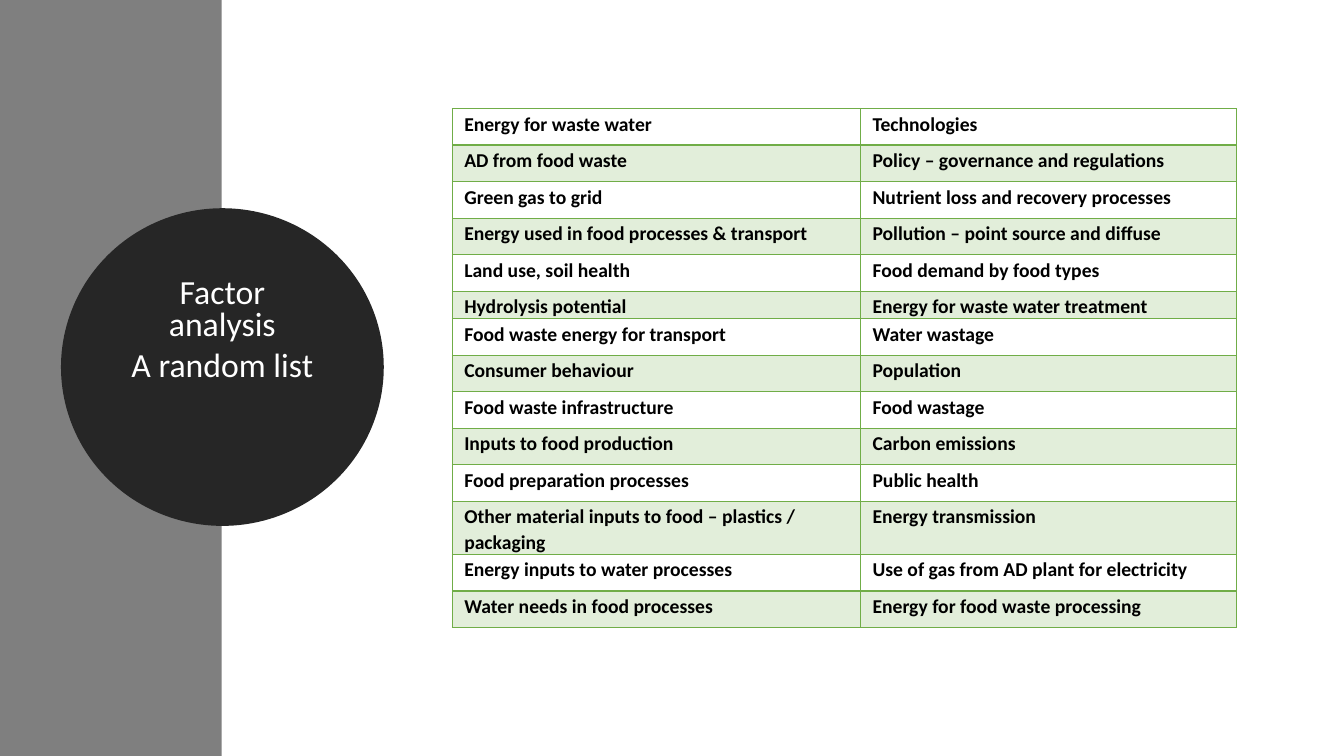
import dataclasses

import lxml.etree
import pptx
import pptx.dml.color
import pptx.enum.shapes
import pptx.enum.text
import pptx.oxml.ns
import pptx.util
from pptx.util import Cm


@dataclasses.dataclass(frozen=True)
class Theme:
    """Colours, font and type sizes of the slide."""
    font: str = "Calibri"
    band: str = "7F7F7F"
    disc: str = "262626"
    light: str = "FFFFFF"
    ink: str = "000000"
    green: str = "70AD47"
    stripe_alpha: int = 20
    title_size: float = 24.1
    factor_size: float = 14


THEME = Theme()

TITLE = ["Factor analysis", "A random list"]

FACTORS = [
    ("Energy for waste water", "Technologies"),
    ("AD from food waste", "Policy – governance and regulations"),
    ("Green gas to grid", "Nutrient loss and recovery processes"),
    ("Energy used in food processes & transport", "Pollution – point source and diffuse"),
    ("Land use, soil health", "Food demand by food types"),
    ("Hydrolysis potential", "Energy for waste water treatment"),
    ("Food waste energy for transport", "Water wastage"),
    ("Consumer behaviour", "Population"),
    ("Food waste infrastructure", "Food wastage"),
    ("Inputs to food production", "Carbon emissions"),
    ("Food preparation processes", "Public health"),
    ("Other material inputs to food – plastics / packaging", "Energy transmission"),
    ("Energy inputs to water processes", "Use of gas from AD plant for electricity"),
    ("Water needs in food processes", "Energy for food waste processing"),
]
COLUMN_WIDTHS = [Cm(10.29), Cm(9.47)]
ROW_HEIGHT = Cm(0.92)
SHORT_ROW, SHORT_HEIGHT = 5, Cm(0.41)


def rgb(colour):
    """Return a colour object for a hex string."""
    return pptx.dml.color.RGBColor.from_string(colour)


def add_child(parent, tag, **attributes):
    """Append a DrawingML element to a parent."""
    return lxml.etree.SubElement(parent, pptx.oxml.ns.qn(tag), attributes)


def style_paragraph(paragraph, size, colour, spacing, bold=False):
    """Set the line spacing and the font of a paragraph's runs."""
    paragraph.line_spacing = spacing
    for run in paragraph.runs:
        run.font.name = THEME.font
        run.font.size = pptx.util.Pt(size)
        run.font.bold = bold
        run.font.color.rgb = rgb(colour)


def add_filled_shape(slide, preset, left, top, width, height, colour):
    """Add a preset shape with a plain fill and no shadow."""
    shape = slide.shapes.add_shape(preset, left, top, width, height)
    shape.shadow.inherit = False
    shape.fill.solid()
    shape.fill.fore_color.rgb = rgb(colour)
    shape.line.fill.background()
    return shape


def add_title_disc(slide):
    """Add the dark disc that carries the title."""
    disc = add_filled_shape(slide, pptx.enum.shapes.MSO_SHAPE.OVAL,
                            Cm(1.78), Cm(5.49), Cm(7.65), Cm(7.52), THEME.disc)
    disc.line.color.rgb = rgb(THEME.disc)
    disc.line.width = pptx.util.Pt(13.75)
    frame = disc.text_frame
    frame.word_wrap = True
    frame.vertical_anchor = pptx.enum.text.MSO_ANCHOR.MIDDLE
    frame.margin_left = frame.margin_right = Cm(0.3)
    frame.margin_top, frame.margin_bottom = Cm(0.13), Cm(1.95)
    frame.text = "\n".join(TITLE)
    for paragraph in frame.paragraphs:
        paragraph.alignment = pptx.enum.text.PP_ALIGN.CENTER
        paragraph.space_after = pptx.util.Pt(6)
        style_paragraph(paragraph, THEME.title_size, THEME.light, 0.8)


def add_borders(cell, bottom_width):
    """Draw green lines on the four sides of a cell."""
    properties = cell._tc.get_or_add_tcPr()
    widths = {"a:lnL": 1, "a:lnR": 1, "a:lnT": 1, "a:lnB": bottom_width}
    for side, width in widths.items():
        line = add_child(properties, side, w=str(pptx.util.Pt(width)))
        add_child(add_child(line, "a:solidFill"), "a:srgbClr", val=THEME.green)


def fill_cell(cell, striped):
    """Give a cell the pale green stripe or no fill."""
    if not striped:
        cell.fill.background()
        return
    cell.fill.solid()
    cell.fill.fore_color.rgb = rgb(THEME.green)
    colour = cell._tc.tcPr.find(".//" + pptx.oxml.ns.qn("a:solidFill") + "[last()]")
    stripe = cell._tc.tcPr.find(pptx.oxml.ns.qn("a:solidFill"))
    colour = stripe.find(pptx.oxml.ns.qn("a:srgbClr"))
    add_child(colour, "a:alpha", val=str(THEME.stripe_alpha * 1000))


def add_factor_table(slide):
    """Add the striped two-column list of factors."""
    heights = [SHORT_HEIGHT if row == SHORT_ROW else ROW_HEIGHT
               for row in range(len(FACTORS))]
    table = slide.shapes.add_table(len(FACTORS), len(COLUMN_WIDTHS), Cm(11.4), Cm(2.74),
                                   sum(COLUMN_WIDTHS), sum(heights)).table
    table.first_row = table.horz_banding = False
    for column, width in zip(table.columns, COLUMN_WIDTHS):
        column.width = width
    for row, (factors, height) in enumerate(zip(FACTORS, heights)):
        table.rows[row].height = height
        for column, factor in enumerate(factors):
            cell = table.cell(row, column)
            cell.text_frame.text = factor
            cell.margin_left = cell.margin_right = Cm(0.3)
            cell.margin_top, cell.margin_bottom = Cm(0.05), Cm(0)
            style_paragraph(cell.text_frame.paragraphs[0], THEME.factor_size,
                            THEME.ink, 1.07, bold=True)
            add_borders(cell, bottom_width=2 if row == 0 else 1)
            fill_cell(cell, striped=row % 2 == 1)


def main():
    """Build the slide and save it."""
    deck = pptx.Presentation()
    deck.slide_width, deck.slide_height = Cm(33.87), Cm(19.05)
    slide = deck.slides.add_slide(deck.slide_layouts[6])
    add_filled_shape(slide, pptx.enum.shapes.MSO_SHAPE.RECTANGLE,
                     Cm(0), Cm(0), Cm(5.59), deck.slide_height, THEME.band)
    add_title_disc(slide)
    add_factor_table(slide)
    deck.save("out.pptx")


if __name__ == "__main__":
    main()
